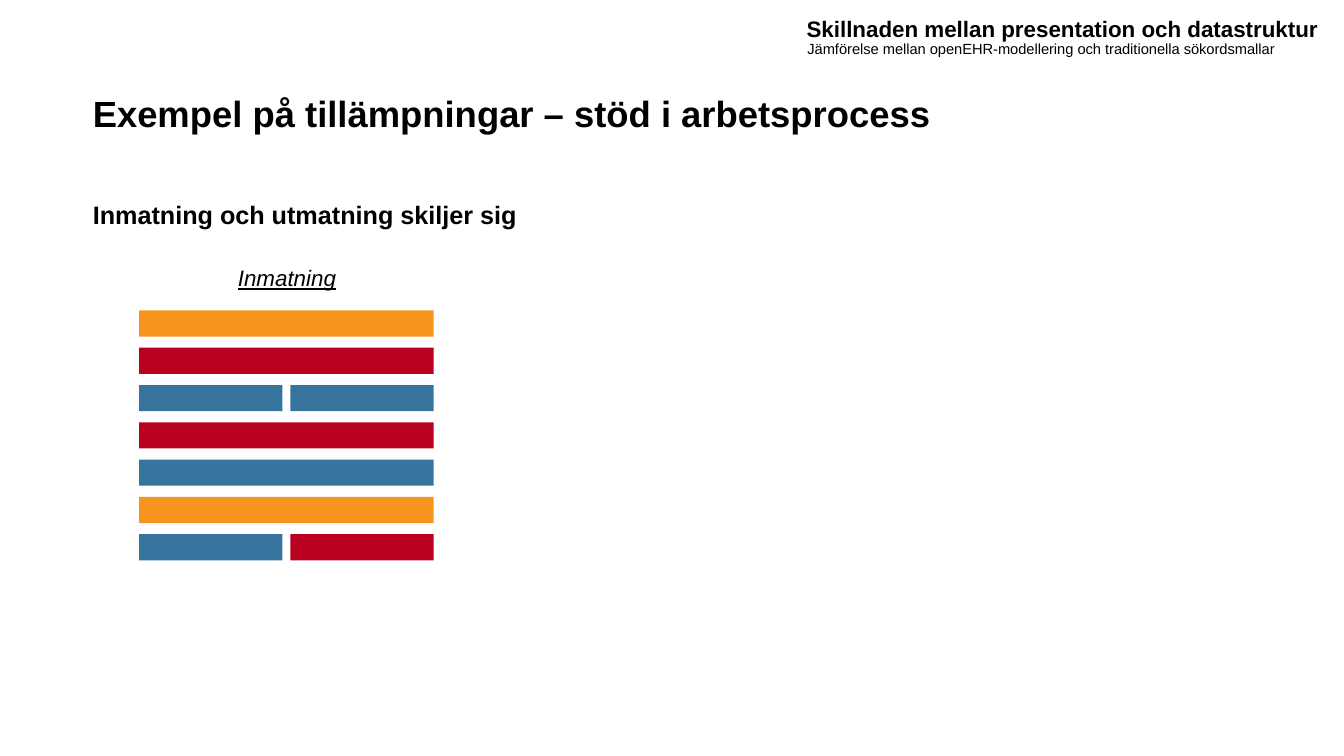
from pptx import Presentation
from pptx.dml.color import RGBColor
from pptx.enum import shapes, text
from pptx.util import Inches, Pt
from lxml import etree

COLORS = {"text": "000000", "orange": "F7941D", "red": "BA0020", "blue": "37749D"}
FONT = "Arial"

# Each row of the input form holds one wide field or two half-width fields
FORM_ROWS = [
    ["orange"],
    ["red"],
    ["blue", "blue"],
    ["red"],
    ["blue"],
    ["orange"],
    ["blue", "red"],
]
FORM_LEFT, FORM_TOP, FORM_WIDTH = 1.38, 3.08, 2.92
ROW_PITCH, FIELD_HEIGHT, FIELD_GAP = 0.37, 0.26, 0.08


def color(name):
    return RGBColor.from_string(COLORS[name])


def write_text(shape, content, size, bold=False, italic=False, underline=False,
               anchor=text.MSO_ANCHOR.TOP, inset=0):
    frame = shape.text_frame
    frame.text = content
    frame.word_wrap = True
    frame.auto_size = text.MSO_AUTO_SIZE.NONE
    frame.vertical_anchor = anchor
    frame.margin_left = frame.margin_right = Inches(inset)
    frame.margin_top = frame.margin_bottom = Inches(inset / 2)
    paragraph = frame.paragraphs[0]
    paragraph.alignment = text.PP_ALIGN.LEFT
    paragraph.space_before = Pt(0)
    font = paragraph.runs[0].font
    font.name, font.size = FONT, Pt(size)
    font.bold, font.italic, font.underline = bold, italic, underline
    font.color.rgb = color("text")


def place(shape, left, top, width, height):
    shape.left, shape.top = Inches(left), Inches(top)
    shape.width, shape.height = Inches(width), Inches(height)


def remove_bullet(paragraph):
    properties = paragraph._p.get_or_add_pPr()
    properties.set("marL", "0")
    properties.set("indent", "0")
    namespace = properties.nsmap["a"]
    etree.SubElement(properties, f"{{{namespace}}}buNone")


def add_label(slide, left, top, width, height, content, size, **style):
    box = slide.shapes.add_textbox(Inches(left), Inches(top), Inches(width), Inches(height))
    write_text(box, content, size, **style)


def add_field(slide, left, top, width, fill):
    field = slide.shapes.add_shape(
        shapes.MSO_SHAPE.RECTANGLE,
        Inches(left), Inches(top), Inches(width), Inches(FIELD_HEIGHT))
    field.shadow.inherit = False
    field.fill.solid()
    field.fill.fore_color.rgb = color(fill)
    field.line.fill.background()


def add_form(slide):
    for row, fills in enumerate(FORM_ROWS):
        count = len(fills)
        width = (FORM_WIDTH - FIELD_GAP * (count - 1)) / count
        for column, fill in enumerate(fills):
            left = FORM_LEFT + column * (width + FIELD_GAP)
            add_field(slide, left, FORM_TOP + row * ROW_PITCH, width, fill)


def main():
    presentation = Presentation()
    presentation.slide_width = Inches(13.33)
    presentation.slide_height = Inches(7.5)
    slide = presentation.slides.add_slide(presentation.slide_layouts[1])

    # Title and body
    title, body = slide.placeholders
    place(title, 0.92, 0.4, 11.5, 1.45)
    write_text(title, "Exempel på tillämpningar – stöd i arbetsprocess", 26,
               bold=True, anchor=text.MSO_ANCHOR.MIDDLE)
    place(body, 0.92, 1.98, 11.5, 4.44)
    write_text(body, "Inmatning och utmatning skiljer sig", 18, bold=True)
    remove_bullet(body.text_frame.paragraphs[0])

    # Running header
    add_label(slide, 8, 0.03, 5.39, 0.51, "Skillnaden mellan presentation och datastruktur",
              16, bold=True, anchor=text.MSO_ANCHOR.MIDDLE)
    add_label(slide, 7.91, 0.35, 5.24, 0.38,
              "Jämförelse mellan openEHR-modellering och traditionella sökordsmallar",
              10.5, inset=0.1)

    # Input form
    add_label(slide, 2.36, 2.62, 1.06, 0.39, "Inmatning", 16, italic=True, underline=True)
    add_form(slide)

    presentation.save("out.pptx")


if __name__ == "__main__":
    main()
